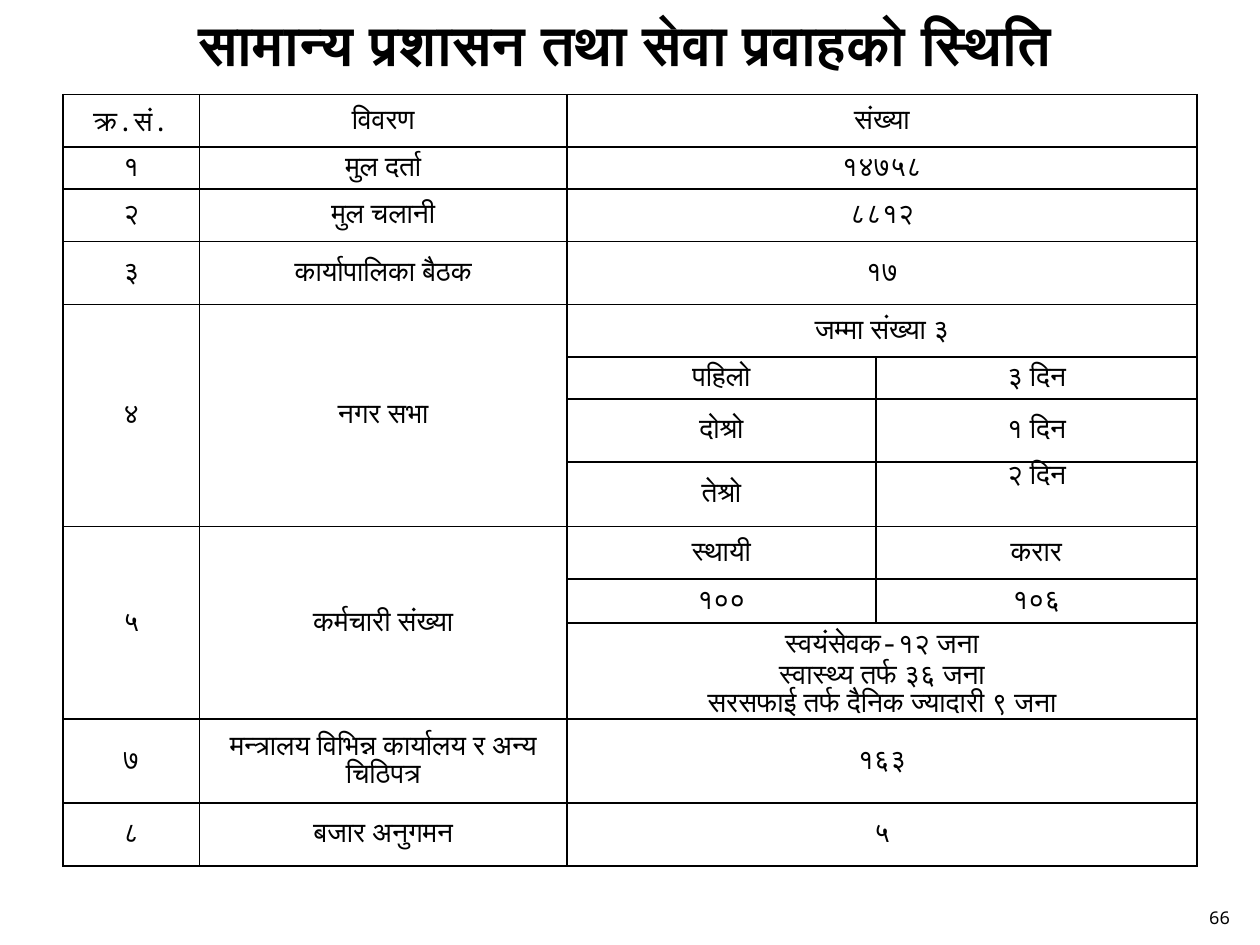
from pptx import Presentation
from pptx.dml.color import RGBColor
from pptx.enum.text import MSO_ANCHOR as Anchor, PP_ALIGN as Align
from pptx.oxml import parse_xml
from pptx.oxml.ns import nsdecls
from pptx.util import Pt

FONT = "Noto Sans Mono"
BLACK = "000000"
COLUMN_WIDTHS = [78, 210, 176.5, 183.5]
ROW_HEIGHTS = [30, 24, 30, 36, 30, 24, 36, 37, 30, 25, 55, 48, 36]
ROWS = [
    ["क्र.सं.", "विवरण", "संख्या", None],
    ["१", "मुल दर्ता", "१४७५८", None],
    ["२", "मुल चलानी", "८८१२", None],
    ["३", "कार्यापालिका बैठक", "१७", None],
    ["४", "नगर सभा", "जम्मा संख्या ३", None],
    [None, None, "पहिलो", "३ दिन"],
    [None, None, "दोश्रो", "१ दिन"],
    [None, None, "तेश्रो", "२ दिन"],
    ["५", "कर्मचारी संख्या", "स्थायी", "करार"],
    [None, None, "१००", "१०६"],
    [None, None, "स्वयंसेवक-१२ जना\nस्वास्थ्य तर्फ ३६ जना\nसरसफाई तर्फ दैनिक ज्यादारी ९ जना", None],
    ["७", "मन्त्रालय विभिन्न कार्यालय र अन्य चिठिपत्र", "१६३", None],
    ["८", "बजार अनुगमन", "५", None],
]
THIRD_MEETING_DAYS = (7, 3)


def color(value):
    return RGBColor.from_string(value)


def write(frame, text, size=16, bold=False, align=Align.CENTER):
    frame.word_wrap = True
    frame.text = text
    for paragraph in frame.paragraphs:
        paragraph.alignment = align
        font = paragraph.runs[0].font
        font.name = FONT
        font.size = Pt(size)
        font.bold = bold
        font.color.rgb = color(BLACK)


def add_borders(cell):
    properties = cell._tc.get_or_add_tcPr()
    for position, side in enumerate(("lnL", "lnR", "lnT", "lnB")):
        properties.insert(position, parse_xml(
            f'<a:{side} {nsdecls("a")} w="{Pt(1)}"><a:solidFill>'
            f'<a:srgbClr val="{BLACK}"/></a:solidFill></a:{side}>'))


def format_cell(cell):
    cell.margin_left = cell.margin_right = Pt(5)
    cell.margin_top = cell.margin_bottom = 0
    cell.vertical_anchor = Anchor.MIDDLE
    cell.fill.background()
    add_borders(cell)


def merge_cells(table):
    for row, values in enumerate(ROWS):
        if values[3] is None:
            table.cell(row, 2).merge(table.cell(row, 3))
        if values[0] is not None:
            last = row
            while last + 1 < len(ROWS) and ROWS[last + 1][0] is None:
                last += 1
            if last > row:
                for column in (0, 1):
                    table.cell(row, column).merge(table.cell(last, column))


def add_status_table(slide):
    table = slide.shapes.add_table(
        len(ROWS), len(COLUMN_WIDTHS), Pt(36), Pt(54),
        Pt(sum(COLUMN_WIDTHS)), Pt(sum(ROW_HEIGHTS))).table
    table.first_row = table.horz_banding = False
    for column, width in zip(table.columns, COLUMN_WIDTHS):
        column.width = Pt(width)
    for row, height in zip(table.rows, ROW_HEIGHTS):
        row.height = Pt(height)
    for row, values in enumerate(ROWS):
        for column, text in enumerate(values):
            cell = table.cell(row, column)
            format_cell(cell)
            if text is not None:
                write(cell.text_frame, text)
    table.cell(*THIRD_MEETING_DAYS).vertical_anchor = Anchor.TOP
    merge_cells(table)


def place_title(slide, text):
    title = slide.shapes.title
    title.left, title.top, title.width, title.height = Pt(66), Pt(2), Pt(582), Pt(46)
    title.text_frame.vertical_anchor = Anchor.TOP
    write(title.text_frame, text, size=32, bold=True)


def add_page_number(slide, number):
    frame = slide.shapes.add_textbox(Pt(681), Pt(505), Pt(29), Pt(29)).text_frame
    frame.vertical_anchor = Anchor.BOTTOM
    write(frame, number, size=10, align=Align.RIGHT)


def main():
    presentation = Presentation()
    presentation.slide_width, presentation.slide_height = Pt(720), Pt(540)
    slide = presentation.slides.add_slide(presentation.slide_layouts[5])
    add_status_table(slide)
    place_title(slide, "सामान्य प्रशासन तथा सेवा प्रवाहको स्थिति")
    add_page_number(slide, "66")
    presentation.save("out.pptx")


if __name__ == "__main__":
    main()
